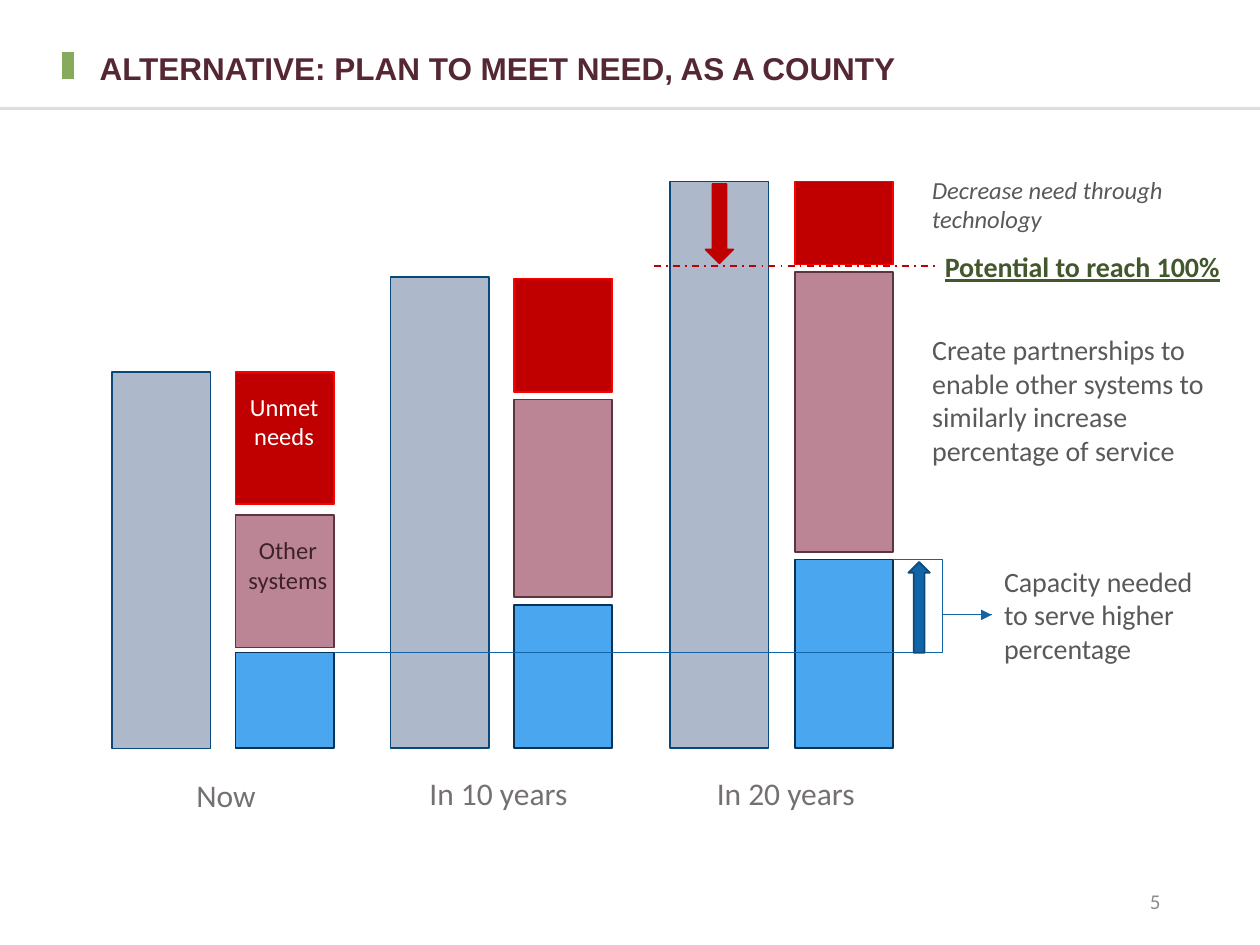
from lxml.etree import SubElement
from pptx import Presentation
from pptx.dml.color import RGBColor
from pptx.enum.dml import MSO_LINE
from pptx.enum.shapes import MSO_CONNECTOR, MSO_SHAPE
from pptx.enum.text import MSO_ANCHOR, MSO_AUTO_SIZE, PP_ALIGN
from pptx.oxml.ns import qn
from pptx.util import Inches, Pt

THEME = {
    "head": "Arial", "body": "Calibri",
    "title": "552733", "accent": "86AB5D", "rule": "000000", "page": "8C8C8C",
    "text": "595959", "label": "767171", "goal": "43572D",
    "dark": "3E222A", "light": "FFFFFF", "red": "C00000",
    "blue": "0F65A7", "edge": "0B4B7C",
    "small": 12, "note": 14, "main": 16, "large": 18,
}

# Fill and outline of each kind of bar
KINDS = {
    "total": ("ADB9CA", "08487A"),
    "own": ("4AA7EF", "083354"),
    "other": ("BB8595", "5D3440"),
    "unmet": ("C00000", "FF0000"),
}
BASE, WIDE = 5.94, 0.78

# Left of total bar, its top, left of stack, then top and height of each part
GROUPS = [
    (0.89, 2.95, 1.87, {"own": (5.18, 0.76), "other": (4.09, 1.05), "unmet": (2.95, 1.05)}),
    (3.10, 2.20, 4.08, {"own": (4.80, 1.14), "other": (3.17, 1.57), "unmet": (2.21, 0.90)}),
    (5.32, 1.44, 6.31, {"own": (4.44, 1.50), "other": (2.16, 2.22), "unmet": (1.44, 0.66)}),
]

# Text, box, size, colour, options
TEXTS = [
    ("Other systems", (1.83, 4.2, 0.91, 0.57), "note", "dark", {"align": PP_ALIGN.CENTER}),
    ("Unmet needs", (1.8, 3.06, 0.91, 0.57), "note", "light", {"align": PP_ALIGN.CENTER}),
    ("Capacity needed to serve higher percentage", (7.87, 4.43, 1.71, 0.91), "main", "text", {}),
    ("Create partnerships to enable other systems to similarly increase percentage of service",
     (7.3, 2.59, 2.47, 1.18), "main", "text", {}),
    ("Decrease need through technology", (7.3, 1.34, 2.47, 0.57), "note", "text", {"italic": True}),
    ("Potential to reach 100%", (7.4, 1.93, 2.41, 0.37), "main", "goal",
     {"wrap": False, "bold": True, "underline": True}),
    ("Now", (1.46, 6.11, 0.68, 0.4), "large", "label", {"wrap": False}),
    ("In 10 years", (3.31, 6.09, 1.31, 0.4), "large", "label", {"wrap": False}),
    ("In 20 years", (5.59, 6.09, 1.31, 0.4), "large", "label", {"wrap": False}),
]

# Block arrows: shape, box, fill, outline
ARROWS = [
    (MSO_SHAPE.UP_ARROW, (7.21, 4.46, 0.17, 0.72), "blue", "edge"),
    (MSO_SHAPE.DOWN_ARROW, (5.6, 1.46, 0.22, 0.63), "red", "red"),
]


def rgb(code):
    return RGBColor.from_string(code)


def add_run(para, text, size, color, face="body", **style):
    run = para.add_run()
    run.text = text
    font = run.font
    font.name, font.size = THEME[face], Pt(THEME[size])
    font.color.rgb = rgb(THEME[color])
    for name, value in style.items():
        setattr(font, name, value)


def add_text(slide, text, box, size, color, align=PP_ALIGN.LEFT, wrap=True,
             anchor=MSO_ANCHOR.TOP, grow=True, **style):
    frame = slide.shapes.add_textbox(*map(Inches, box)).text_frame
    frame.word_wrap = wrap
    frame.auto_size = MSO_AUTO_SIZE.SHAPE_TO_FIT_TEXT if grow else MSO_AUTO_SIZE.NONE
    frame.vertical_anchor = anchor
    para = frame.paragraphs[0]
    para.alignment = align
    add_run(para, text, size, color, **style)


def add_block(slide, kind, box, fill, edge):
    shape = slide.shapes.add_shape(kind, *map(Inches, box))
    shape.shadow.inherit = False
    shape.fill.solid()
    shape.fill.fore_color.rgb = rgb(fill)
    shape.line.color.rgb = rgb(edge)
    shape.line.width = Pt(1)


def add_line(slide, ends, color, width, kind=MSO_CONNECTOR.STRAIGHT):
    line = slide.shapes.add_connector(kind, *map(Inches, ends))
    line.line.color.rgb = rgb(THEME[color])
    line.line.width = Pt(width)
    SubElement(line._element.spPr, qn("a:effectLst"))
    return line


def main():
    deck = Presentation()
    deck.slide_width, deck.slide_height = Inches(10), Inches(7.5)
    slide = deck.slides.add_slide(deck.slide_layouts[5])

    # Header marks
    add_line(slide, (0.54, 0.41, 0.54, 0.63), "accent", 7)
    rule = add_line(slide, (0, 0.86, 10, 0.86), "rule", 1.75)
    tint = next(rule._element.iter(qn("a:srgbClr")))
    SubElement(tint, qn("a:alpha")).set("val", "12000")

    # Title
    title = slide.shapes.title
    title.left, title.top, title.width, title.height = map(Inches, (0.69, 0.27, 8.62, 0.57))
    title.text_frame.vertical_anchor = MSO_ANCHOR.MIDDLE
    para = title.text_frame.paragraphs[0]
    para.alignment, para.line_spacing = PP_ALIGN.LEFT, 0.9
    add_run(para, "ALTERNATIVE: PLAN TO MEET NEED, AS A COUNTY", "large", "title", "head", bold=True)

    # Bars
    for left, top, stack, parts in GROUPS:
        add_block(slide, MSO_SHAPE.RECTANGLE, (left, top, WIDE, BASE - top), *KINDS["total"])
        for kind, (high, tall) in parts.items():
            add_block(slide, MSO_SHAPE.RECTANGLE, (stack, high, WIDE, tall), *KINDS[kind])

    # Bracket from today's capacity and the future one to the note
    lead = add_line(slide, (7.09, 4.44, 7.87, 4.88), "blue", 0.5, MSO_CONNECTOR.ELBOW)
    SubElement(lead.line._get_or_add_ln(), qn("a:tailEnd")).set("type", "triangle")
    now = add_line(slide, (2.65, 5.18, 7.87, 4.88), "blue", 0.5, MSO_CONNECTOR.ELBOW)
    bend = SubElement(next(now._element.iter(qn("a:avLst"))), qn("a:gd"))
    bend.set("name", "adj1")
    bend.set("fmla", "val 92600")

    # Target line and block arrows
    goal = add_line(slide, (5.19, 2.11, 7.44, 2.11), "red", 1)
    goal.line.dash_style = MSO_LINE.DASH_DOT
    for kind, box, fill, edge in ARROWS:
        add_block(slide, kind, box, THEME[fill], THEME[edge])

    # Labels, notes and page number
    for text, box, size, color, more in TEXTS:
        add_text(slide, text, box, size, color, **more)
    add_text(slide, "5", (7.06, 6.95, 2.25, 0.4), "small", "page",
             align=PP_ALIGN.RIGHT, anchor=MSO_ANCHOR.MIDDLE, grow=False)

    deck.save("out.pptx")


if __name__ == "__main__":
    main()
